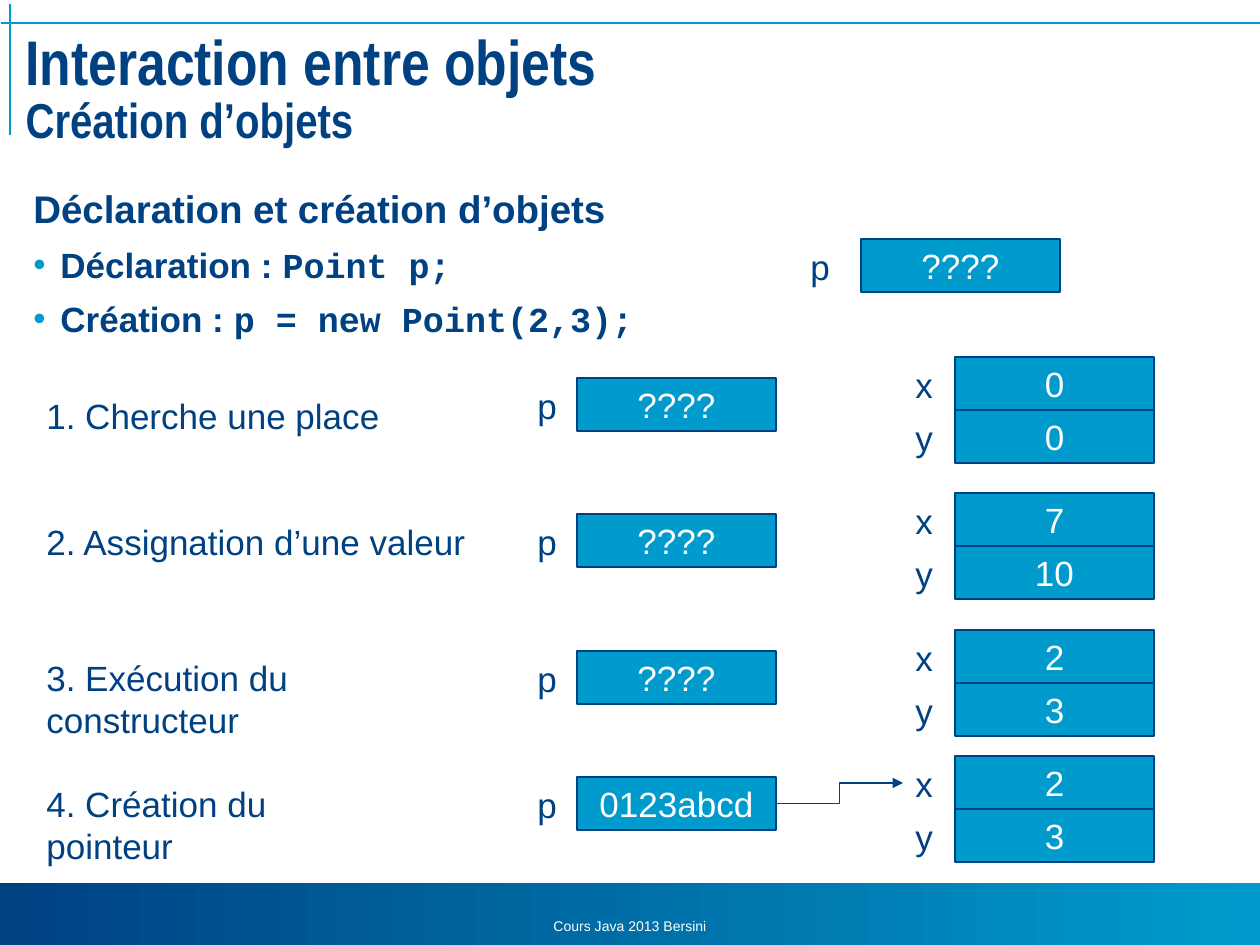
from lxml import etree
from pptx import Presentation
from pptx.dml.color import RGBColor
from pptx.enum.shapes import MSO_CONNECTOR, MSO_SHAPE
from pptx.enum.text import MSO_ANCHOR, MSO_AUTO_SIZE, PP_ALIGN
from pptx.oxml.ns import qn
from pptx.util import Pt

RECT = MSO_SHAPE.RECTANGLE
STRAIGHT, ELBOW = MSO_CONNECTOR.STRAIGHT, MSO_CONNECTOR.ELBOW
TOP, MIDDLE, BOTTOM = MSO_ANCHOR.TOP, MSO_ANCHOR.MIDDLE, MSO_ANCHOR.BOTTOM
LEFT, CENTER = PP_ALIGN.LEFT, PP_ALIGN.CENTER
GROW = MSO_AUTO_SIZE.SHAPE_TO_FIT_TEXT

THEME = {
    "navy": RGBColor.from_string("004182"),
    "cyan": RGBColor.from_string("009BCC"),
    "white": RGBColor.from_string("FFFFFF"),
    "sans": "Arial", "narrow": "Arial Narrow", "code": "Courier New",
    "title": 36, "subtitle": 28, "heading": 22, "text": 20, "footer": 8,
}

TITLE = ("Interaction entre objets", "Création d’objets")
FOOTER = "Cours Java 2013 Bersini"
HEADING = "Déclaration et création d’objets"
STATEMENTS = [
    ("Déclaration : ", "Point p;"),
    ("Création : ", "p = new Point(2,3);"),
]
UNSET = "????"
STEPS = [
    {"label": "1. Cherche une place", "width": 368, "label_top": 388,
     "top": 378, "pointer": UNSET, "fields": {"x": "0", "y": "0"}},
    {"label": "2. Assignation d’une valeur", "width": 455, "label_top": 514,
     "top": 514, "pointer": UNSET, "fields": {"x": "7", "y": "10"}},
    {"label": "3. Exécution du constructeur", "width": 469, "label_top": 650,
     "top": 651, "pointer": UNSET, "fields": {"x": "2", "y": "3"}, "wrap": True},
    {"label": "4. Création du pointeur", "width": 381, "label_top": 776,
     "top": 777, "pointer": "0123abcd", "fields": {"x": "2", "y": "3"}, "wrap": True},
]

PX = 914400 / 126
CELL_W, CELL_H = 199, 53
STEP_X, POINTER_X, OBJECT_X = 34, 577, 955
POINTER_GAP, FIELD_GAP = 52, 52
OBJECT_RISE = 21
WRAP_INSET = 120
HANGING = 27


def px(*lengths):
    return [round(length * PX) for length in lengths]


def set_all(target, values):
    for name, value in values.items():
        setattr(target, name, value)


def write(paragraph, text, size, color="navy", face="sans", bold=False):
    run = paragraph.add_run()
    run.text = text
    set_all(run.font, {"size": Pt(THEME[size]), "name": THEME[face], "bold": bold})
    run.font.color.rgb = THEME[color]


def add_text(slide, box, text, size="text", color="navy", align=LEFT, **frame):
    label = slide.shapes.add_textbox(*px(*box))
    set_all(label.text_frame, {"word_wrap": False, **frame})
    paragraph = label.text_frame.paragraphs[0]
    paragraph.alignment = align
    write(paragraph, text, size, color)
    return label


def add_cell(slide, left, top, value):
    cell = slide.shapes.add_shape(RECT, *px(left, top, CELL_W, CELL_H))
    cell.shadow.inherit = False
    cell.fill.solid()
    cell.fill.fore_color.rgb = THEME["cyan"]
    cell.line.color.rgb = THEME["navy"]
    cell.line.width = Pt(0.75)
    set_all(cell.text_frame, {"word_wrap": False, "vertical_anchor": MIDDLE})
    paragraph = cell.text_frame.paragraphs[0]
    paragraph.alignment = CENTER
    write(paragraph, value, "text", "white")
    return cell


def add_variable(slide, left, top, name, value, gap):
    cell = add_cell(slide, left, top, value)
    label = add_text(slide, (left - gap, top, 45, 54), name, auto_size=GROW)
    return label, cell


def add_line(slide, kind, ends, color, width):
    line = slide.shapes.add_connector(kind, *px(*ends))
    line.line.color.rgb = THEME[color]
    line.line.width = Pt(width)
    etree.SubElement(line.line._get_or_add_ln().getparent(), qn("a:effectLst"))
    return line


def add_decor(slide):
    band = slide.shapes.add_shape(RECT, *px(0, 883, 1260, 66))
    band.shadow.inherit = False
    band.line.fill.background()
    band.fill.gradient()
    band.fill.gradient_angle = 0
    for stop, color in zip(band.fill.gradient_stops, ("navy", "cyan")):
        stop.color.rgb = THEME[color]
    for ends in ((1, 23, 1260, 23), (10, 4, 10, 135)):
        add_line(slide, STRAIGHT, ends, "cyan", 1)
    add_text(slide, (420, 892, 420, 48), FOOTER, "footer", "white", CENTER,
             word_wrap=True, vertical_anchor=BOTTOM)


def add_title(slide):
    title = slide.shapes.title
    set_all(title, dict(zip(("left", "top", "width", "height"), px(13, 28, 1239, 127))))
    set_all(title.text_frame, {"vertical_anchor": TOP, "word_wrap": True})
    paragraph = title.text_frame.paragraphs[0]
    set_all(paragraph, {"alignment": LEFT, "line_spacing": 0.85})
    write(paragraph, TITLE[0], "title", face="narrow", bold=True)
    paragraph.add_line_break()
    write(paragraph, TITLE[1], "subtitle", face="narrow", bold=True)


def add_bullet(paragraph):
    properties = paragraph._p.get_or_add_pPr()
    indent = px(HANGING)[0]
    properties.set("marL", str(indent))
    properties.set("indent", str(-indent))
    color = etree.SubElement(properties, qn("a:buClr"))
    etree.SubElement(color, qn("a:srgbClr"), val=str(THEME["cyan"]))
    etree.SubElement(properties, qn("a:buFont"), typeface=THEME["sans"])
    etree.SubElement(properties, qn("a:buChar"), char="•")


def add_body(slide):
    body = slide.shapes.add_textbox(*px(21, 179, 1218, 640)).text_frame
    body.word_wrap = True
    write(body.paragraphs[0], HEADING, "heading", bold=True)
    for intro, code in STATEMENTS:
        paragraph = body.add_paragraph()
        add_bullet(paragraph)
        paragraph.space_before = Pt(7)
        write(paragraph, intro, "text", bold=True)
        write(paragraph, code, "text", face="code", bold=True)


def add_step(slide, step):
    label = add_text(slide, (STEP_X, step["label_top"], step["width"], 54),
                     step["label"], auto_size=GROW)
    if step.get("wrap"):
        set_all(label.text_frame, {"word_wrap": True, "margin_right": px(WRAP_INSET)[0]})
    pointer = add_variable(slide, POINTER_X, step["top"], "p", step["pointer"], POINTER_GAP)[1]
    object_top = step["top"] - OBJECT_RISE
    fields = [
        add_variable(slide, OBJECT_X, object_top + row * CELL_H, name, value, FIELD_GAP)[0]
        for row, (name, value) in enumerate(step["fields"].items())
    ]
    return pointer, fields[0]


def add_reference(slide, pointer, field):
    arrow = add_line(slide, ELBOW, (776, 803, 903, 782), "navy", 0.75)
    arrow.begin_connect(pointer, 3)
    arrow.end_connect(field, 1)
    etree.SubElement(arrow.line._get_or_add_ln(), qn("a:tailEnd"), type="triangle")


def main():
    deck = Presentation()
    deck.slide_width, deck.slide_height = px(1260, 945)
    slide = deck.slides.add_slide(deck.slide_layouts[5])
    add_decor(slide)
    add_title(slide)
    add_body(slide)
    add_variable(slide, 861, 239, "p", UNSET, 63)
    for step in STEPS:
        pointer, field = add_step(slide, step)
    add_reference(slide, pointer, field)
    deck.save("out.pptx")


if __name__ == "__main__":
    main()
